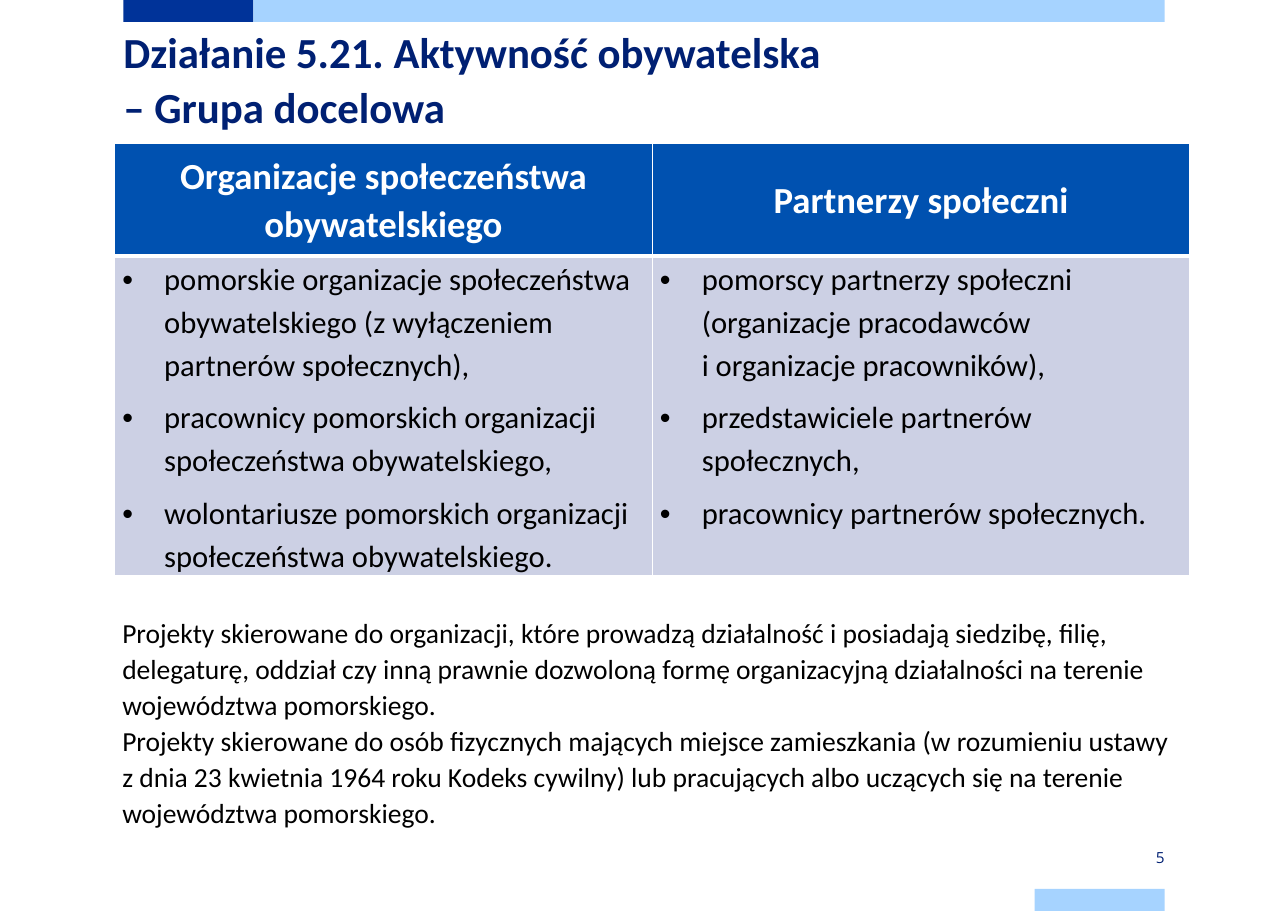
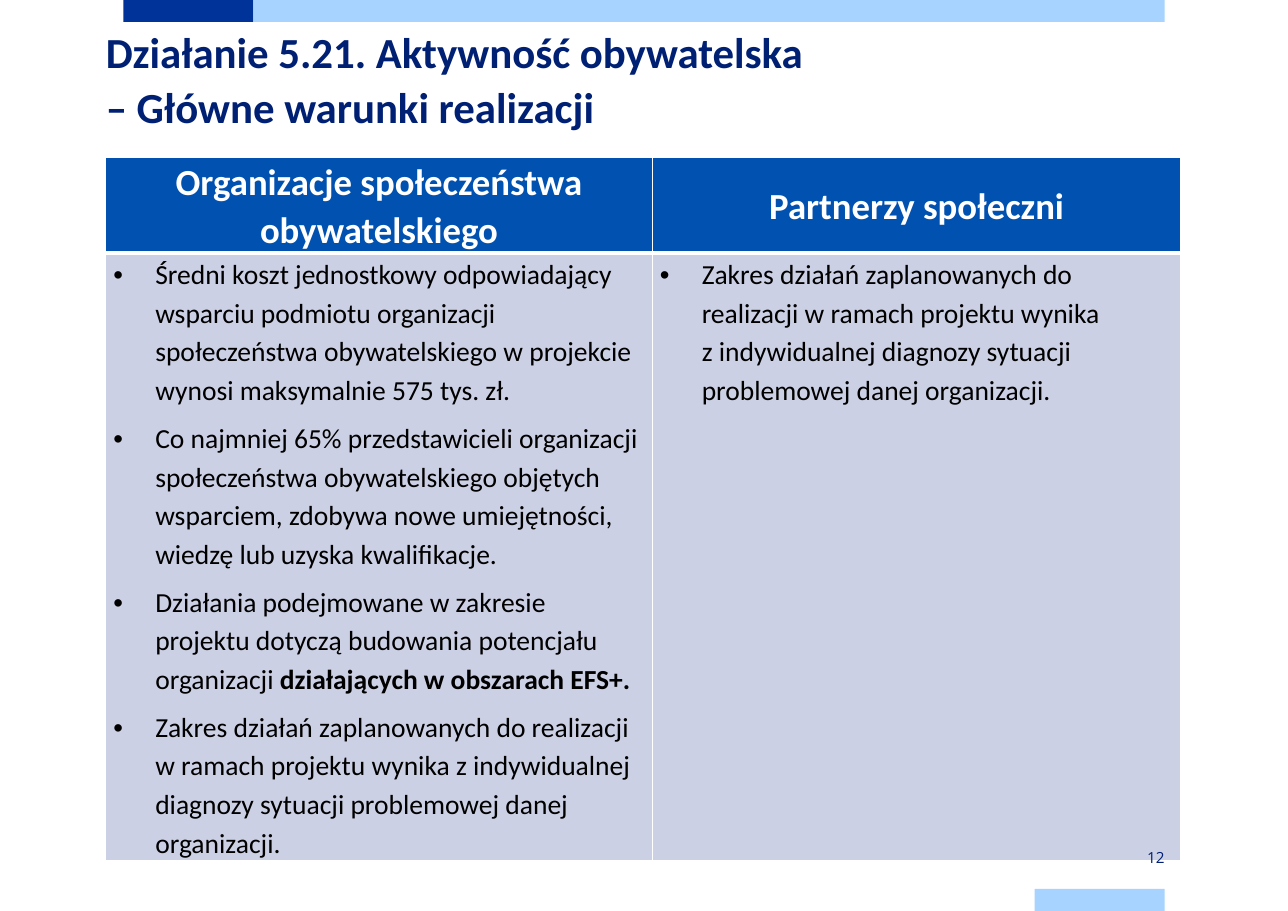
from dataclasses import dataclass

from lxml import etree
from pptx import Presentation
from pptx.dml.color import RGBColor
from pptx.enum import shapes, text
from pptx.oxml import ns
from pptx.util import Inches, Pt


@dataclass(frozen=True)
class Theme:
    navy: str = "002073"
    blue: str = "003399"
    sky: str = "A6D3FF"
    head: str = "0051B0"
    cell: str = "CCD0E4"
    white: str = "FFFFFF"
    black: str = "000000"
    font: str = "Calibri"
    numfont: str = "Open Sans"
    title: int = 28
    label: int = 24
    note: int = 18
    num: int = 10


T = Theme()
BANDS = [
    (1.12, 0, 1.18, T.blue),
    (2.3, 0, 8.27, T.sky),
    (9.39, 8.07, 1.18, T.sky),
]
HEADS = ["Organizacje społeczeństwa obywatelskiego", "Partnerzy społeczni"]
SLIDES = [
    dict(
        title="Działanie 5.21. Aktywność obywatelska\n– Grupa docelowa",
        num="5", box=(1.12, 0.2, 9.61, 1.1),
        left=1.04, top=1.3, cols=(4.88, 4.88), rows=(1.02, 2.9, 2.2), size=20,
        lists=[
            [
                "pomorskie organizacje społeczeństwa obywatelskiego (z wyłączeniem partnerów społecznych),",
                "pracownicy pomorskich organizacji społeczeństwa obywatelskiego,",
                "wolontariusze pomorskich organizacji społeczeństwa obywatelskiego.",
            ],
            [
                "pomorscy partnerzy społeczni (organizacje pracodawców\ni organizacje pracowników),",
                "przedstawiciele partnerów społecznych,",
                "pracownicy partnerów społecznych.",
            ],
        ],
        notes=[
            "Projekty skierowane do organizacji, które prowadzą działalność i posiadają siedzibę, filię, "
            "delegaturę, oddział czy inną prawnie dozwoloną formę organizacyjną działalności na terenie "
            "województwa pomorskiego.",
            "Projekty skierowane do osób fizycznych mających miejsce zamieszkania (w rozumieniu ustawy "
            "z dnia 23 kwietnia 1964 roku Kodeks cywilny) lub pracujących albo uczących się na terenie "
            "województwa pomorskiego.",
        ],
    ),
    dict(
        title="Działanie 5.21. Aktywność obywatelska\n– Główne warunki realizacji",
        num="12", box=(0.96, 0.2, 10.24, 1.16),
        left=0.96, top=1.43, cols=(4.96, 4.8), rows=(0.86, 5.51), size=18,
        lists=[
            [
                "Średni koszt jednostkowy odpowiadający wsparciu podmiotu organizacji społeczeństwa "
                "obywatelskiego w projekcie wynosi maksymalnie 575 tys. zł.",
                "Co najmniej 65% przedstawicieli organizacji społeczeństwa obywatelskiego objętych "
                "wsparciem, zdobywa nowe umiejętności, wiedzę lub uzyska kwalifikacje.",
                ("Działania podejmowane w zakresie projektu dotyczą budowania potencjału organizacji ",
                 "działających w obszarach EFS+."),
                "Zakres działań zaplanowanych do realizacji w ramach projektu wynika z indywidualnej "
                "diagnozy sytuacji problemowej danej organizacji.",
            ],
            [
                "Zakres działań zaplanowanych do realizacji w ramach projektu wynika\n"
                "z indywidualnej diagnozy sytuacji problemowej danej organizacji.",
            ],
        ],
        notes=[],
    ),
]


def style(para, size, color, bold=False, font=T.font):
    for run in para.runs:
        run.font.size, run.font.bold, run.font.name = Pt(size), bold, font
        run.font.color.rgb = RGBColor.from_string(color)


def margins(obj, left, top, right, bottom):
    obj.margin_left, obj.margin_right = Inches(left), Inches(right)
    obj.margin_top, obj.margin_bottom = Inches(top), Inches(bottom)


def bullet(para):
    props = para._p.get_or_add_pPr()
    props.set("marL", str(Inches(0.38)))
    props.set("indent", str(-Inches(0.38)))
    etree.SubElement(props, ns.qn("a:buFont")).set("typeface", "Arial")
    etree.SubElement(props, ns.qn("a:buChar")).set("char", "•")


def border(cell, top, bottom):
    props = cell._tc.get_or_add_tcPr()
    for side, width in zip("LRTB", (1, 1, top, bottom)):
        line = etree.SubElement(props, ns.qn("a:ln" + side), w=str(Pt(width)))
        fill = etree.SubElement(line, ns.qn("a:solidFill"))
        etree.SubElement(fill, ns.qn("a:srgbClr"), val=T.white)


def fill_cell(cell, items, size, color, fill, row, bold=False,
              bullets=False, align=None, space=1.07, after=0, inset=0):
    border(cell, 3 if row == 1 else 1, 3 if row == 0 else 1)
    cell.fill.solid()
    cell.fill.fore_color.rgb = RGBColor.from_string(fill)
    margins(cell, 0.07, inset, 0.07, 0)
    frame = cell.text_frame
    for i, item in enumerate(items):
        para = frame.paragraphs[0] if i == 0 else frame.add_paragraph()
        if bullets:
            bullet(para)
        plain, strong = item if isinstance(item, tuple) else (item, "")
        para.text = plain
        style(para, size, color, bold)
        if strong:
            para.add_run().text = strong
            style(para, size, color)
            para.runs[-1].font.bold = True
        para.alignment, para.line_spacing = align, space
        para.space_before, para.space_after = Pt(0), Pt(after)


def add_grid(slide, data):
    cols, rows = data["cols"], data["rows"]
    grid = slide.shapes.add_table(
        len(rows), len(cols), Inches(data["left"]), Inches(data["top"]),
        Inches(sum(cols)), Inches(sum(rows))).table
    grid.first_row = grid.horz_banding = False
    for col, width in zip(grid.columns, cols):
        col.width = Inches(width)
    for row, height in zip(grid.rows, rows):
        row.height = Inches(height)
    for c, (head, items) in enumerate(zip(HEADS, data["lists"])):
        cell = grid.cell(0, c)
        fill_cell(cell, [head], T.label, T.white, T.head, 0, bold=True,
                  align=text.PP_ALIGN.CENTER)
        cell.vertical_anchor = text.MSO_ANCHOR.MIDDLE
        fill_cell(grid.cell(1, c), items, data["size"], T.black, T.cell, 1,
                  bullets=True, space=1.15, after=6)
    if data["notes"]:
        foot = grid.cell(2, 0)
        foot.merge(grid.cell(2, 1))
        fill_cell(foot, data["notes"], T.note, T.black, T.white, 2, inset=0.36)


def add_title(slide, data):
    title = slide.shapes.title
    title.left, title.top, title.width, title.height = map(Inches, data["box"])
    frame = title.text_frame
    margins(frame, 0, 0, 0, 0)
    frame.auto_size = text.MSO_AUTO_SIZE.NONE
    frame.vertical_anchor = text.MSO_ANCHOR.TOP
    para = frame.paragraphs[0]
    para.text = data["title"]
    para.alignment, para.line_spacing = text.PP_ALIGN.LEFT, Pt(36)
    style(para, T.title, T.navy, True)


def add_num(slide, num):
    box = slide.shapes.add_textbox(
        Inches(9.39), Inches(7.68), Inches(1.18), Inches(0.2))
    frame = box.text_frame
    frame.word_wrap = True
    frame.vertical_anchor = text.MSO_ANCHOR.MIDDLE
    margins(frame, 0, 0.08, 0, 0.08)
    para = frame.paragraphs[0]
    para.text, para.alignment = num, text.PP_ALIGN.RIGHT
    style(para, T.num, T.navy, font=T.numfont)


def add_bands(slide, layout):
    for i, (left, top, width, color) in enumerate(BANDS):
        band = slide.shapes.add_shape(
            shapes.MSO_SHAPE.RECTANGLE, Inches(left), Inches(top),
            Inches(width), Inches(0.2))
        band.shadow.inherit = False
        band.fill.solid()
        band.fill.fore_color.rgb = RGBColor.from_string(color)
        band.line.fill.background()
        band.element.nvSpPr.cNvPr.set("id", str(20 + i))
        layout.shapes.element.insert(2 + i, band.element)


def main():
    deck = Presentation()
    deck.slide_width, deck.slide_height = Inches(11.69), Inches(8.27)
    layout = deck.slide_layouts[5]
    for i, data in enumerate(SLIDES):
        slide = deck.slides.add_slide(layout)
        if i == 0:
            add_bands(slide, layout)
        add_title(slide, data)
        add_grid(slide, data)
        add_num(slide, data["num"])
    deck.save("out.pptx")


if __name__ == "__main__":
    main()
